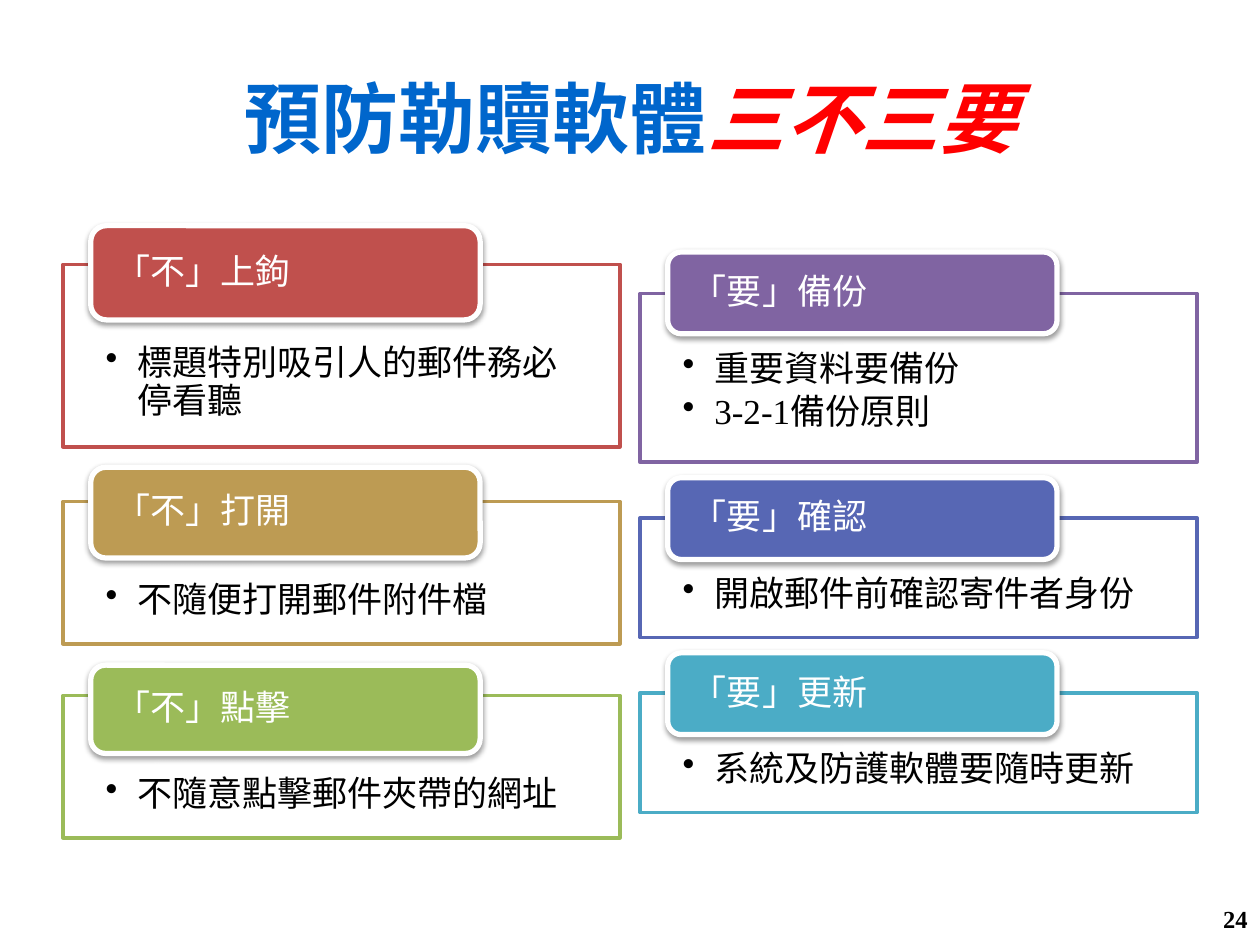
from dataclasses import dataclass

from lxml.etree import SubElement
from pptx import Presentation
from pptx.dml.color import RGBColor
from pptx.enum.shapes import MSO_SHAPE
from pptx.enum.text import MSO_ANCHOR, PP_ALIGN
from pptx.oxml.ns import qn
from pptx.util import Cm, Pt


@dataclass(frozen=True)
class Theme:
    font: str = "Times New Roman"
    title_size: int = 44
    text_size: int = 20
    number_size: int = 14
    title: str = "0066CC"
    emphasis: str = "FF0000"
    ink: str = "000000"
    paper: str = "FFFFFF"


theme = Theme()


def style(font, size, color, bold=False):
    font.name = theme.font
    font.size = Pt(size)
    font.bold = bold
    font.color.rgb = RGBColor.from_string(color)


def add_panel(kind, left, top, width, height, fill, line, line_width):
    """Add a filled, outlined shape with left-aligned, wrapping text."""
    panel = slide.shapes.add_shape(kind, Cm(left), Cm(top), Cm(width), Cm(height))
    panel.shadow.inherit = False
    panel.fill.solid()
    panel.fill.fore_color.rgb = RGBColor.from_string(fill)
    panel.line.color.rgb = RGBColor.from_string(line)
    panel.line.width = Pt(line_width)
    panel.text_frame.word_wrap = True
    return panel


prs = Presentation()
prs.slide_width, prs.slide_height = Cm(25.4), Cm(19.05)
slide = prs.slides.add_slide(prs.slide_layouts[6])

# Title
title = slide.shapes.add_textbox(Cm(1.27), Cm(0.76), Cm(22.86), Cm(3.18)).text_frame
title.word_wrap = True
title.vertical_anchor = MSO_ANCHOR.MIDDLE
heading = title.paragraphs[0]
heading.alignment = PP_ALIGN.CENTER
for words, color, italic in [
    ("預防勒贖軟體", theme.title, False),
    ("三不三要", theme.emphasis, True),
]:
    run = heading.add_run()
    run.text = words
    style(run.font, theme.title_size, color, bold=True)
    run.font.italic = italic

# Columns: left, inset above the points, and
# (label, color, tab top, tab height, box top, box height, points)
columns = [
    (1.27, 1.63, [
        ("「不」上鉤", "C0504D", 4.55, 1.9, 5.33, 3.68, ["標題特別吸引人的郵件務必停看聽"]),
        ("「不」打開", "BD9B53", 9.42, 1.83, 10.11, 2.87, ["不隨便打開郵件附件檔"]),
        ("「不」點擊", "9BBB59", 13.41, 1.78, 14.02, 2.87, ["不隨意點擊郵件夾帶的網址"]),
    ]),
    (12.9, 1.17, [
        ("「要」備份", "8064A2", 5.08, 1.65, 5.92, 3.4, ["重要資料要備份", "3-2-1備份原則"]),
        ("「要」確認", "5767B4", 9.63, 1.65, 10.44, 2.41, ["開啟郵件前確認寄件者身份"]),
        ("「要」更新", "4BACC6", 13.16, 1.65, 13.97, 2.41, ["系統及防護軟體要隨時更新"]),
    ]),
]

for left, inset_top, rules in columns:
    for label, color, tab_top, tab_height, box_top, box_height, points in rules:
        box = add_panel(MSO_SHAPE.RECTANGLE, left, box_top, 11.23, box_height,
                        theme.paper, color, 2)
        box_color = box.fill._xPr.find(qn("a:solidFill"))[0]
        SubElement(box_color, qn("a:alpha"), val="90000")
        body = box.text_frame
        body.vertical_anchor = MSO_ANCHOR.TOP
        body.margin_left = body.margin_right = Cm(0.86)
        body.margin_top, body.margin_bottom = Cm(inset_top), Cm(0.41)
        for i, point in enumerate(points):
            item = body.add_paragraph() if i else body.paragraphs[0]
            item.text = point
            item.alignment = PP_ALIGN.LEFT
            item.level = 1
            item.line_spacing = 0.9
            item.space_after = Pt(3)
            properties = item._p.get_or_add_pPr()
            properties.set("marL", str(Cm(0.64)))
            properties.set("indent", str(-Cm(0.64)))
            SubElement(properties, qn("a:buChar"), char="•")
            style(item.font, theme.text_size, theme.ink)

        tab = add_panel(MSO_SHAPE.ROUNDED_RECTANGLE, left + 0.56, tab_top, 7.85,
                        tab_height, color, theme.paper, 3)
        effects = tab._element.spPr.find(qn("a:effectLst"))
        shadow = SubElement(effects, qn("a:outerShdw"), blurRad=str(Pt(3.1)),
                            dist=str(Pt(1.6)), dir="5400000", rotWithShape="0")
        shadow_color = SubElement(shadow, qn("a:srgbClr"), val=theme.ink)
        SubElement(shadow_color, qn("a:alpha"), val="38000")
        tab_text = tab.text_frame
        tab_text.vertical_anchor = MSO_ANCHOR.MIDDLE
        tab_text.margin_left = tab_text.margin_right = Cm(0.41)
        tab_text.margin_top = tab_text.margin_bottom = 0
        name = tab_text.paragraphs[0]
        name.text = label
        name.alignment = PP_ALIGN.LEFT
        name.line_spacing = 0.9
        style(name.font, theme.text_size, theme.paper)

# Slide number
footer = slide.shapes.add_textbox(Cm(19.48), Cm(18.01), Cm(5.92), Cm(1.02)).text_frame
footer.word_wrap = True
footer.vertical_anchor = MSO_ANCHOR.MIDDLE
number = footer.paragraphs[0]
number.text = "24"
number.alignment = PP_ALIGN.RIGHT
style(number.font, theme.number_size, theme.ink, bold=True)

prs.save("out.pptx")
